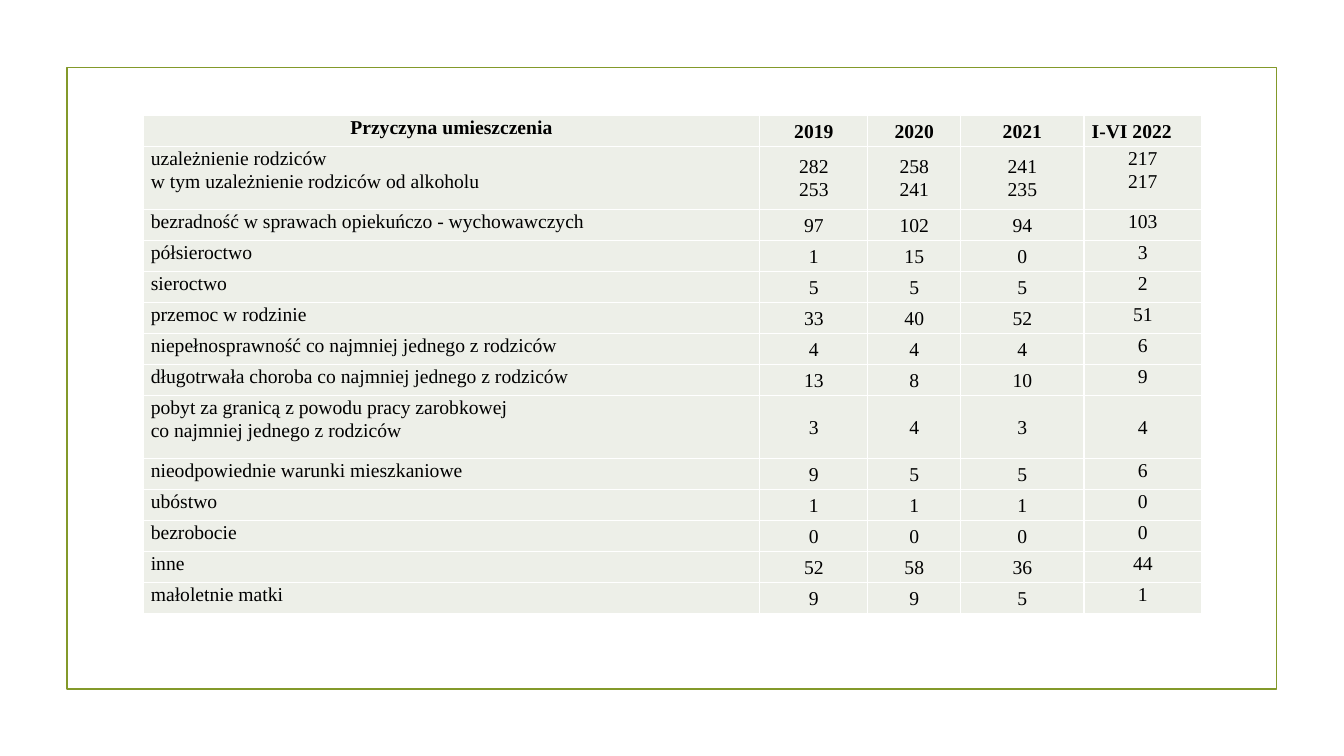
import pptx
import pptx.dml.color
import pptx.enum.shapes
import pptx.enum.text
import pptx.oxml
import pptx.oxml.ns
import pptx.util

Cm = pptx.util.Cm
Pt = pptx.util.Pt
Align = pptx.enum.text.PP_ALIGN
Anchor = pptx.enum.text.MSO_ANCHOR

COLORS = {"frame": "83992A", "cell": "EDEFE8", "border": "FFFFFF", "text": "000000"}
FONT = "Times New Roman"
COLUMN_WIDTHS = [15.54, 2.72, 2.34, 3.11, 2.96]
LINE_ROW, TALL_ROW = 0.78, 1.59
PERIODS_TOP_ANCHORED = 4

HEADER = ["Przyczyna umieszczenia", "2019", "2020", "2021", "I-VI 2022"]
REASONS = [
    ["uzależnienie rodziców\nw tym uzależnienie rodziców od alkoholu",
     "282\n253", "258\n241", "241\n235", "217\n217"],
    ["bezradność w sprawach opiekuńczo - wychowawczych", "97", "102", "94", "103"],
    ["półsieroctwo", "1", "15", "0", "3"],
    ["sieroctwo", "5", "5", "5", "2"],
    ["przemoc w rodzinie", "33", "40", "52", "51"],
    ["niepełnosprawność co najmniej jednego z rodziców", "4", "4", "4", "6"],
    ["długotrwała choroba co najmniej jednego z rodziców", "13", "8", "10", "9"],
    ["pobyt za granicą z powodu pracy zarobkowej\nco najmniej jednego z rodziców",
     "3", "4", "3", "4"],
    ["nieodpowiednie warunki mieszkaniowe", "9", "5", "5", "6"],
    ["ubóstwo", "1", "1", "1", "0"],
    ["bezrobocie", "0", "0", "0", "0"],
    ["inne", "52", "58", "36", "44"],
    ["małoletnie matki", "9", "9", "5", "1"],
]


def rgb(name):
    return pptx.dml.color.RGBColor.from_string(COLORS[name])


def add_frame(page, left, top, width, height):
    frame = page.shapes.add_shape(
        pptx.enum.shapes.MSO_SHAPE.RECTANGLE, Cm(left), Cm(top), Cm(width), Cm(height))
    frame.shadow.inherit = False
    frame.fill.background()
    frame.line.color.rgb = rgb("frame")
    frame.line.width = Pt(1.25)


def style_cell(cell, anchor):
    cell.margin_left = cell.margin_right = Cm(0.19)
    cell.margin_top = cell.margin_bottom = 0
    cell.vertical_anchor = anchor
    properties = cell._tc.get_or_add_tcPr()
    for side in ("lnL", "lnR", "lnT", "lnB"):
        properties.append(pptx.oxml.parse_xml(
            f'<a:{side} {pptx.oxml.ns.nsdecls("a")} w="{Pt(1)}"><a:solidFill>'
            f'<a:srgbClr val="{COLORS["border"]}"/></a:solidFill></a:{side}>'))
    cell.fill.solid()
    cell.fill.fore_color.rgb = rgb("cell")


def write_cell(cell, text, align, bold):
    """Write each line of the text as its own paragraph."""
    for index, line in enumerate(text.split("\n")):
        box = cell.text_frame
        para = box.add_paragraph() if index else box.paragraphs[0]
        para.alignment = align
        para.line_spacing = 1.07
        span = para.add_run()
        span.text = line
        span.font.name = FONT
        span.font.size = Pt(14)
        span.font.bold = bold
        span.font.color.rgb = rgb("text")


def add_reasons_table(page, left, top):
    rows = [HEADER] + REASONS
    heights = [TALL_ROW if "\n" in row[0] else LINE_ROW for row in rows]
    table = page.shapes.add_table(
        len(rows), len(HEADER), Cm(left), Cm(top),
        Cm(sum(COLUMN_WIDTHS)), Cm(sum(heights))).table
    table.first_row = table.horz_banding = False
    for column, width in zip(table.columns, COLUMN_WIDTHS):
        column.width = Cm(width)
    last = len(HEADER) - 1
    for r, (row, height) in enumerate(zip(rows, heights)):
        table.rows[r].height = Cm(height)
        is_header = r == 0
        single_in_tall = "\n" in row[0] and "\n" not in row[last]
        for c, text in enumerate(row):
            middle = 0 < c < last or c == last and (is_header or single_in_tall)
            left_aligned = c == (last if is_header else 0)
            cell = table.cell(r, c)
            style_cell(cell, Anchor.MIDDLE if middle else Anchor.TOP)
            write_cell(cell, text, Align.LEFT if left_aligned else Align.CENTER, is_header)


def main():
    deck = pptx.Presentation()
    deck.slide_width, deck.slide_height = Cm(33.87), Cm(19.05)
    page = deck.slides.add_slide(deck.slide_layouts[6])
    add_frame(page, 1.69, 1.7, 30.48, 15.67)
    add_reasons_table(page, 3.61, 2.91)
    deck.save("out.pptx")


if __name__ == "__main__":
    main()
